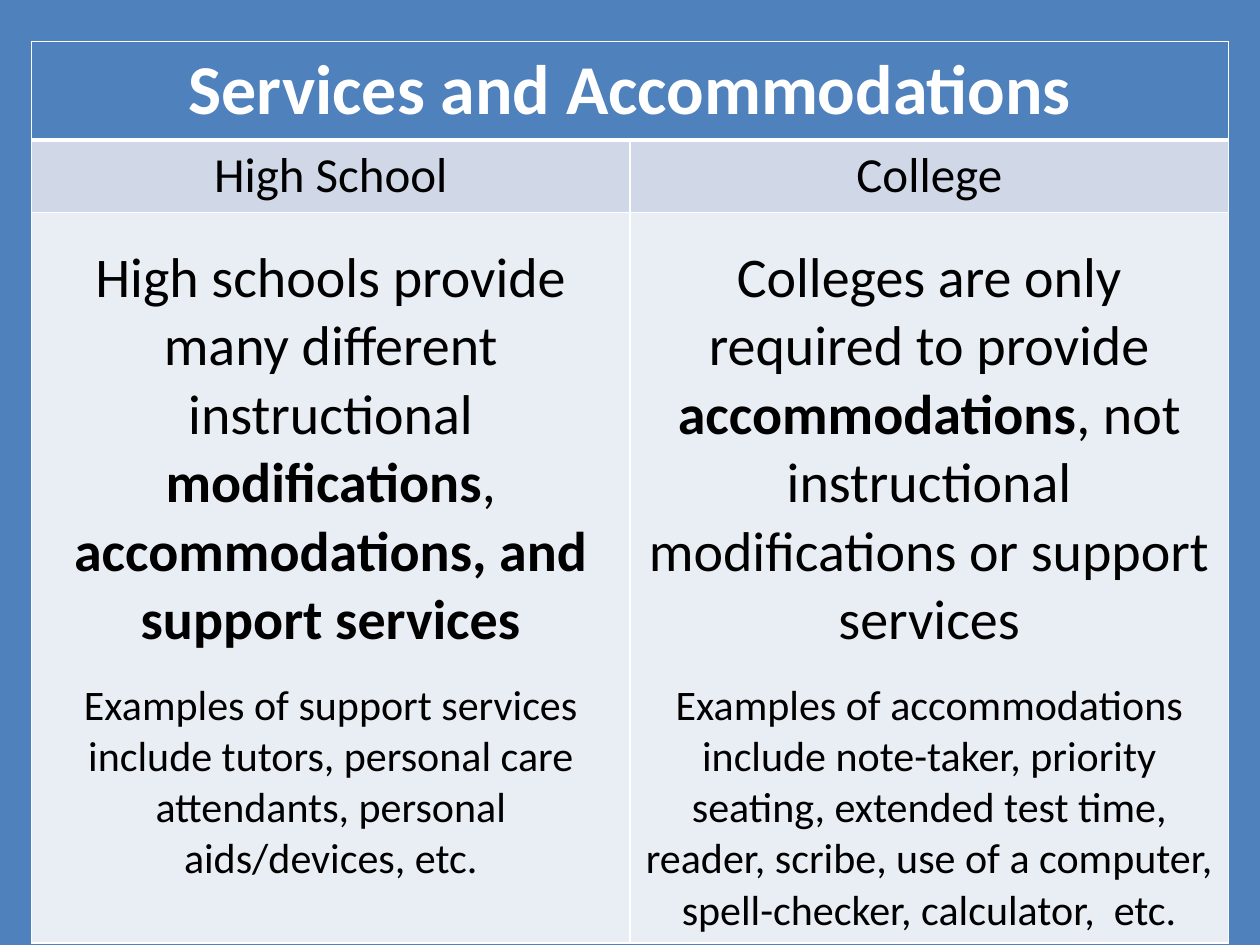
from dataclasses import dataclass

from lxml.etree import SubElement
from pptx import Presentation
from pptx.dml.color import RGBColor
from pptx.enum.text import PP_ALIGN
from pptx.oxml.ns import qn
from pptx.util import Inches, Pt

COLORS = {
    "blue": "4F81BD",
    "subheading": "D0D8E8",
    "body": "E9EDF4",
    "white": "FFFFFF",
    "black": "000000",
}
FONT = "Calibri"
COLUMN_WIDTH = 4.75
ROW_HEIGHTS = (0.78, 0.57, 5.8)
PARAGRAPH_GAP = 14.6


@dataclass(frozen=True)
class Setting:
    name: str
    summary: tuple[tuple[str, bool], ...]
    examples: str


SETTINGS = (
    Setting(
        "High School",
        (
            ("High schools provide many different instructional ", False),
            ("modifications", True),
            (", ", False),
            ("accommodations, and support services", True),
        ),
        "Examples of support services include tutors, personal care attendants, "
        "personal aids/devices, etc.",
    ),
    Setting(
        "College",
        (
            ("Colleges are only required to provide ", False),
            ("accommodations", True),
            (", not instructional modifications or support services", False),
        ),
        "Examples of accommodations include note-taker, priority seating, "
        "extended test time, reader, scribe, use of a computer, spell-checker, "
        "calculator,  etc.",
    ),
)


def write(paragraph, text: str, *, size: float, color: str = "black",
          bold: bool = False) -> None:
    paragraph.alignment = PP_ALIGN.CENTER
    run = paragraph.add_run()
    run.text = text
    run.font.name = FONT
    run.font.size = Pt(size)
    run.font.bold = bold
    run.font.color.rgb = RGBColor.from_string(COLORS[color])


def style_cell(cell, fill: str, *, top: float = 1, bottom: float = 1) -> None:
    properties = cell._tc.get_or_add_tcPr()
    for side, width in (("L", 1), ("R", 1), ("T", top), ("B", bottom)):
        border = SubElement(properties, qn(f"a:ln{side}"), w=str(Pt(width)))
        line_fill = SubElement(border, qn("a:solidFill"))
        SubElement(line_fill, qn("a:srgbClr"), val=COLORS["white"])
    cell.fill.solid()
    cell.fill.fore_color.rgb = RGBColor.from_string(COLORS[fill])


def fill_column(table, column: int, setting: Setting) -> None:
    subheading, body = table.cell(1, column), table.cell(2, column)
    style_cell(subheading, "subheading", top=3)
    write(subheading.text_frame.paragraphs[0], setting.name, size=28)

    style_cell(body, "body")
    body.margin_top = Inches(0.25)
    summary = body.text_frame.paragraphs[0]
    for text, bold in setting.summary:
        write(summary, text, size=32, bold=bold)
    examples = body.text_frame.add_paragraph()
    examples.space_before = Pt(PARAGRAPH_GAP)
    write(examples, setting.examples, size=24)


def main() -> None:
    presentation = Presentation()
    presentation.slide_width, presentation.slide_height = Inches(10), Inches(7.5)
    slide = presentation.slides.add_slide(presentation.slide_layouts[6])
    slide.background.fill.solid()
    slide.background.fill.fore_color.rgb = RGBColor.from_string(COLORS["blue"])

    comparison = slide.shapes.add_table(
        len(ROW_HEIGHTS), len(SETTINGS), Inches(0.25), Inches(0.33),
        Inches(COLUMN_WIDTH * len(SETTINGS)), Inches(sum(ROW_HEIGHTS)),
    ).table
    for row, height in zip(comparison.rows, ROW_HEIGHTS):
        row.height = Inches(height)

    heading = comparison.cell(0, 0)
    heading.merge(comparison.cell(0, len(SETTINGS) - 1))
    for column in range(len(SETTINGS)):
        style_cell(comparison.cell(0, column), "blue", bottom=3)
    write(heading.text_frame.paragraphs[0], "Services and Accommodations",
          size=40, color="white", bold=True)
    for column, setting in enumerate(SETTINGS):
        fill_column(comparison, column, setting)

    presentation.save("out.pptx")


if __name__ == "__main__":
    main()
